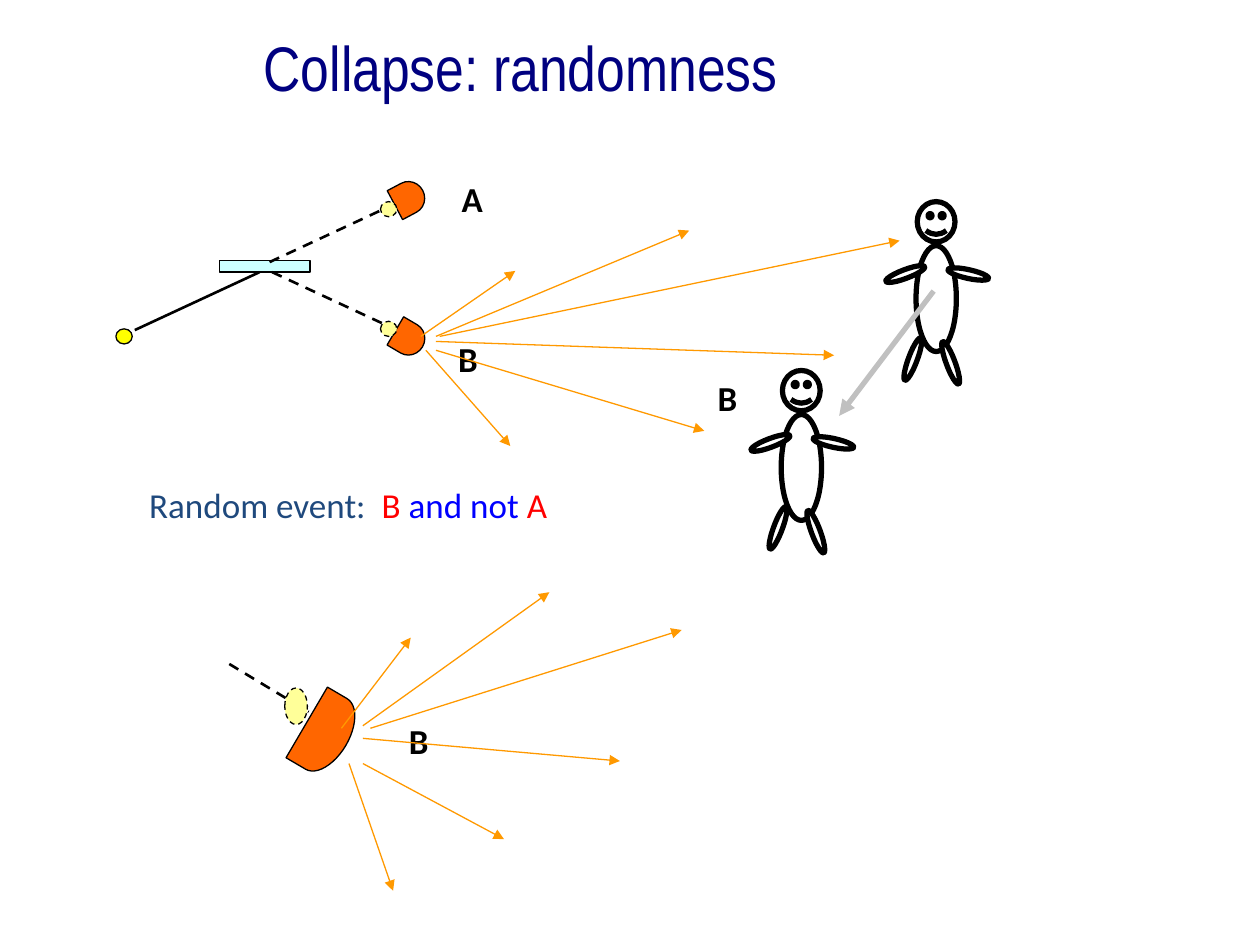
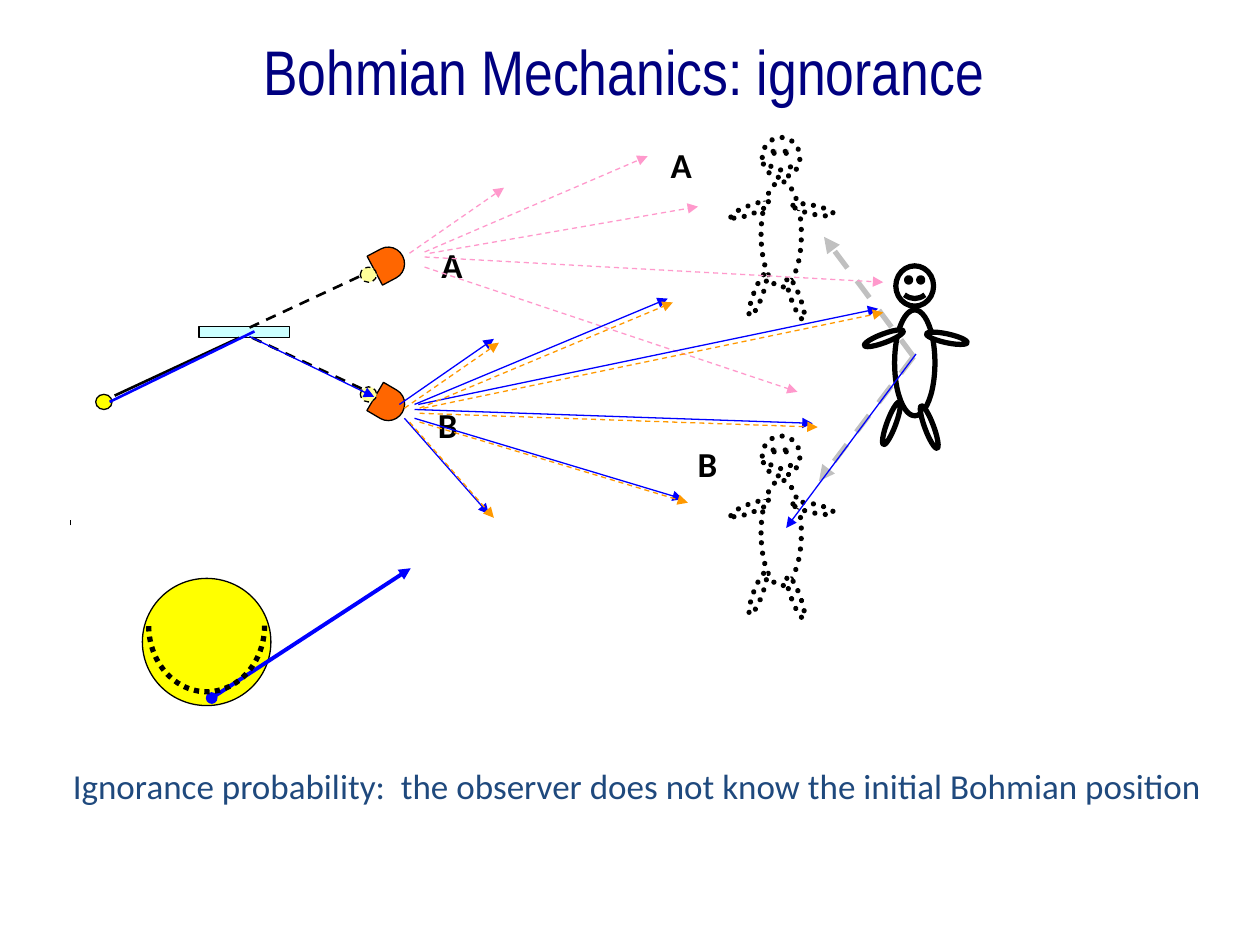
from dataclasses import dataclass

from lxml.etree import SubElement
from pptx import Presentation
from pptx.dml.color import RGBColor
from pptx.enum.dml import MSO_LINE
from pptx.enum.shapes import MSO_CONNECTOR, MSO_SHAPE
from pptx.enum.text import PP_ALIGN
from pptx.oxml.ns import qn
from pptx.util import Inches, Pt


@dataclass(frozen=True)
class Theme:
    """Colours, fonts, type sizes and line widths shared by the slides."""

    black: str = "000000"
    white: str = "FFFFFF"
    navy: str = "000080"
    slate: str = "1F497D"
    red: str = "FF0000"
    blue: str = "0000FF"
    orange: str = "FF9900"
    pink: str = "FF99CC"
    grey: str = "C0C0C0"
    detector: str = "FF6600"
    mirror: str = "CCFFFF"
    particle: str = "FFFF00"
    glow: str = "FFFF99"
    title_font: str = "Arial Narrow"
    body_font: str = "Calibri"
    title_size: int = 36
    body_size: int = 20
    thin: float = 0.75
    medium: float = 1.5
    strong: float = 2.25
    thick: float = 3


THEME = Theme()

OBSERVER_LIMBS = [
    (-0.01, 0.35, 0.32, 0.84, 0),
    (-0.07, 1.07, 0.07, 0.36, 20.5),
    (0.23, 1.1, 0.07, 0.36, 339.5),
    (-0.26, 0.54, 0.33, 0.07, 339.5),
    (0.24, 0.54, 0.33, 0.07, 12.2),
]

RAYS_FROM_B = [
    ((3.46, 2.67), (5.47, 1.83)),
    ((3.49, 2.67), (7.14, 1.91)),
    ((3.46, 2.71), (6.62, 2.82)),
    ((3.46, 2.78), (5.59, 3.42)),
    ((3.34, 2.67), (4.09, 2.15)),
    ((3.38, 2.78), (4.05, 3.54)),
]

RAYS_FROM_A = [
    ((3.37, 2), (5.14, 1.24)),
    ((3.41, 2.01), (5.54, 1.64)),
    ((3.37, 2.04), (7.01, 2.24)),
    ((3.37, 2.12), (6.33, 3.11)),
    ((3.25, 2.01), (4, 1.49)),
]

RAYS_IN_CLOSE_UP = [
    ((2.88, 5.76), (4.36, 4.7)),
    ((2.94, 5.78), (5.41, 5)),
    ((2.88, 5.86), (4.92, 6.04)),
    ((2.88, 6.06), (4, 6.66)),
    ((2.71, 5.78), (3.26, 5.06)),
    ((2.77, 6.06), (3.12, 7.07)),
]


def style_line(line, color, width, dash=None):
    """Set the colour, width and dash of a line."""
    line.color.rgb = RGBColor.from_string(color)
    line.width = Pt(width)
    if dash is not None:
        line.dash_style = dash


def draw_shape(slide, kind, box, fill, width=THEME.thin, dash=None, rotation=0):
    """Add a preset shape with a black outline."""
    shape = slide.shapes.add_shape(kind, *map(Inches, box))
    shape.shadow.inherit = False
    shape.rotation = rotation
    if fill is None:
        shape.fill.background()
    else:
        shape.fill.solid()
        shape.fill.fore_color.rgb = RGBColor.from_string(fill)
    style_line(shape.line, THEME.black, width, dash)
    return shape


def draw_line(slide, start, end, color, width=THEME.thin, dash=None, head=None, tail=None):
    """Add a straight connector with optional line ends."""
    connector = slide.shapes.add_connector(
        MSO_CONNECTOR.STRAIGHT, *map(Inches, (*start, *end))
    )
    style_line(connector.line, color, width, dash)
    properties = connector.element.spPr
    outline = properties.find(qn("a:ln"))
    for tag, kind in (("a:headEnd", head), ("a:tailEnd", tail)):
        if kind:
            SubElement(outline, qn(tag), type=kind)
    SubElement(properties, qn("a:effectLst"))


def draw_arrow(slide, start, end, color, width=THEME.thin, dash=None, head=None):
    """Add a connector that ends in a triangle."""
    draw_line(slide, start, end, color, width, dash, head, "triangle")


def draw_rays(slide, rays, color, dash=None, shift=(0, 0)):
    """Add a fan of arrows moved by a shift."""
    for start, end in rays:
        draw_arrow(slide, moved(start, shift), moved(end, shift), color, dash=dash)


def moved(place, shift):
    """Move a point or box, keeping any size that follows its position."""
    return (place[0] + shift[0], place[1] + shift[1], *place[2:])


def draw_text(slide, box, runs, align, font=THEME.body_font, size=THEME.body_size, bold=False):
    """Add a one-paragraph text box from (text, colour) runs."""
    frame = slide.shapes.add_textbox(*map(Inches, box)).text_frame
    frame.word_wrap = True
    paragraph = frame.paragraphs[0]
    paragraph.alignment = align
    for text, color in runs:
        run = paragraph.add_run()
        run.text = text
        run.font.name = font
        run.font.size = Pt(size)
        run.font.bold = bold
        run.font.color.rgb = RGBColor.from_string(color)


def draw_title(slide, box, text, align):
    """Add a slide title."""
    draw_text(slide, box, [(text, THEME.navy)], align, THEME.title_font, THEME.title_size)


def draw_label(slide, box, letter):
    """Add a bold outcome letter."""
    draw_text(slide, box, [(letter, THEME.black)], PP_ALIGN.RIGHT, bold=True)


def draw_detector(slide, box, rotation):
    """Add a detector."""
    draw_shape(slide, MSO_SHAPE.FLOWCHART_DELAY, box, THEME.detector, rotation=rotation)


def draw_glow(slide, box):
    """Add the pale dashed particle in front of a detector."""
    draw_shape(slide, MSO_SHAPE.OVAL, box, THEME.glow, dash=MSO_LINE.DASH)


def draw_apparatus(slide, shift=(0, 0)):
    """Add the source, beam splitter, beams and labelled detectors."""
    draw_shape(slide, MSO_SHAPE.RECTANGLE, moved((1.74, 2.07, 0.72, 0.09), shift), THEME.mirror)
    draw_shape(slide, MSO_SHAPE.OVAL, moved((0.92, 2.61, 0.13, 0.12), shift), THEME.particle)
    for start, end, dash in (
        ((1.07, 2.62), (2.06, 2.16), None),
        ((2.14, 2.08), (3.13, 1.62), MSO_LINE.DASH),
        ((2.16, 2.16), (3.15, 2.62), MSO_LINE.DASH),
    ):
        draw_line(slide, moved(start, shift), moved(end, shift), THEME.black, THEME.medium, dash)
    for letter, detector_top, rotation, glow_top, label_top, label_width in (
        ("A", 1.44, 332, 1.6, 1.36, 0.44),
        ("B", 2.56, 30.4, 2.55, 2.63, 0.4),
    ):
        draw_detector(slide, moved((3.12, detector_top, 0.25, 0.26), shift), rotation)
        draw_glow(slide, moved((3.02, glow_top, 0.13, 0.12), shift))
        draw_label(slide, moved((3.49, label_top, label_width, 0.48), shift), letter)


def draw_observer(slide, left, top, dotted=False):
    """Add a stick observer whose head starts at left and top."""
    dash = MSO_LINE.ROUND_DOT if dotted else None
    head = draw_shape(
        slide, MSO_SHAPE.SMILEY_FACE, (left, top, 0.3, 0.32), THEME.white, THEME.thick, dash
    )
    head.adjustments[0] = 0.047
    parts = [head]
    for *box, rotation in OBSERVER_LIMBS:
        place = moved(box, (left, top))
        parts.append(
            draw_shape(slide, MSO_SHAPE.OVAL, place, THEME.white, THEME.thick, dash, rotation)
        )
    if dotted:
        for part in parts:
            part.element.spPr.find(qn("a:ln")).set("cap", "rnd")


def draw_close_up(slide):
    """Add the enlarged detector B with its rays."""
    draw_line(slide, (1.82, 5.27), (2.45, 5.65), THEME.black, THEME.medium, MSO_LINE.DASH)
    draw_detector(slide, (2.41, 5.5, 0.36, 0.65), 30.4)
    draw_glow(slide, (2.26, 5.46, 0.18, 0.29))
    draw_label(slide, (2.94, 5.66, 0.56, 1.19), "B")
    draw_rays(slide, RAYS_IN_CLOSE_UP, THEME.orange)


def draw_enlarged_particle(slide):
    """Add the enlarged source with its initial position and path."""
    draw_shape(slide, MSO_SHAPE.OVAL, (1.13, 4.59, 1.02, 1.01), THEME.particle)
    draw_arrow(slide, (1.68, 5.54), (3.26, 4.51), THEME.blue, THEME.strong, head="oval")
    arc = draw_shape(
        slide, MSO_SHAPE.ARC, (1.18, 4.44, 0.92, 1.05), None, THEME.thick, MSO_LINE.ROUND_DOT
    )
    arc.adjustments[0] = 0
    arc.adjustments[1] = 108


def build_collapse_slide(slide):
    """Fill the slide on collapse."""
    draw_apparatus(slide)
    draw_observer(slide, 7.28, 1.6)
    draw_observer(slide, 6.21, 2.94)
    draw_label(slide, (5.55, 2.94, 0.4, 0.48), "B")
    draw_arrow(slide, (7.41, 2.31), (6.66, 3.3), THEME.grey, THEME.thick)
    draw_rays(slide, RAYS_FROM_B, THEME.orange)
    draw_title(slide, (0.73, 0.18, 5.54, 0.95), "Collapse: randomness", PP_ALIGN.RIGHT)
    draw_close_up(slide)
    event = [
        ("Random event:  ", THEME.slate),
        ("B ", THEME.red),
        ("and not ", THEME.blue),
        ("A", THEME.red),
    ]
    draw_text(slide, (0.55, 3.79, 3.89, 0.43), event, PP_ALIGN.RIGHT)


def build_bohmian_slide(slide):
    """Fill the slide on Bohmian mechanics."""
    draw_apparatus(slide, (-0.16, 0.52))
    draw_observer(slide, 7.11, 2.11)
    draw_line(slide, (0.56, 4.17), (0.56, 4.13), THEME.black)
    for top in (3.46, 1.09):
        draw_observer(slide, 6.05, top, dotted=True)
    draw_label(slide, (5.15, 1.09, 0.44, 0.48), "A")
    draw_label(slide, (5.39, 3.46, 0.4, 0.48), "B")
    for end in ((6.54, 1.88), (6.5, 3.82)):
        draw_arrow(slide, (7.25, 2.83), end, THEME.grey, THEME.thick, MSO_LINE.DASH)
    draw_rays(slide, RAYS_FROM_A, THEME.pink, MSO_LINE.DASH)
    draw_rays(slide, RAYS_FROM_B, THEME.blue, shift=(-0.17, 0.54))
    draw_rays(slide, RAYS_FROM_B, THEME.orange, MSO_LINE.DASH, (-0.13, 0.57))
    draw_line(slide, (0.87, 3.19), (2.02, 2.63), THEME.blue, THEME.medium)
    draw_arrow(slide, (1.98, 2.67), (2.97, 3.15), THEME.blue)
    draw_arrow(slide, (7.27, 2.81), (6.24, 4.19), THEME.blue)
    draw_title(slide, (1.99, 0.21, 6.21, 0.77), "Bohmian Mechanics: ignorance", PP_ALIGN.LEFT)
    draw_enlarged_particle(slide)
    conclusion = "Ignorance probability:  the observer does not know the initial Bohmian position"
    draw_text(slide, (0.48, 6.02, 9.97, 0.44), [(conclusion, THEME.slate)], PP_ALIGN.LEFT)


def main():
    """Build and save the presentation."""
    presentation = Presentation()
    presentation.slide_width = Inches(10)
    presentation.slide_height = Inches(7.5)
    blank_layout = presentation.slide_layouts[6]
    for build in (build_collapse_slide, build_bohmian_slide):
        build(presentation.slides.add_slide(blank_layout))
    presentation.save("out.pptx")


if __name__ == "__main__":
    main()
